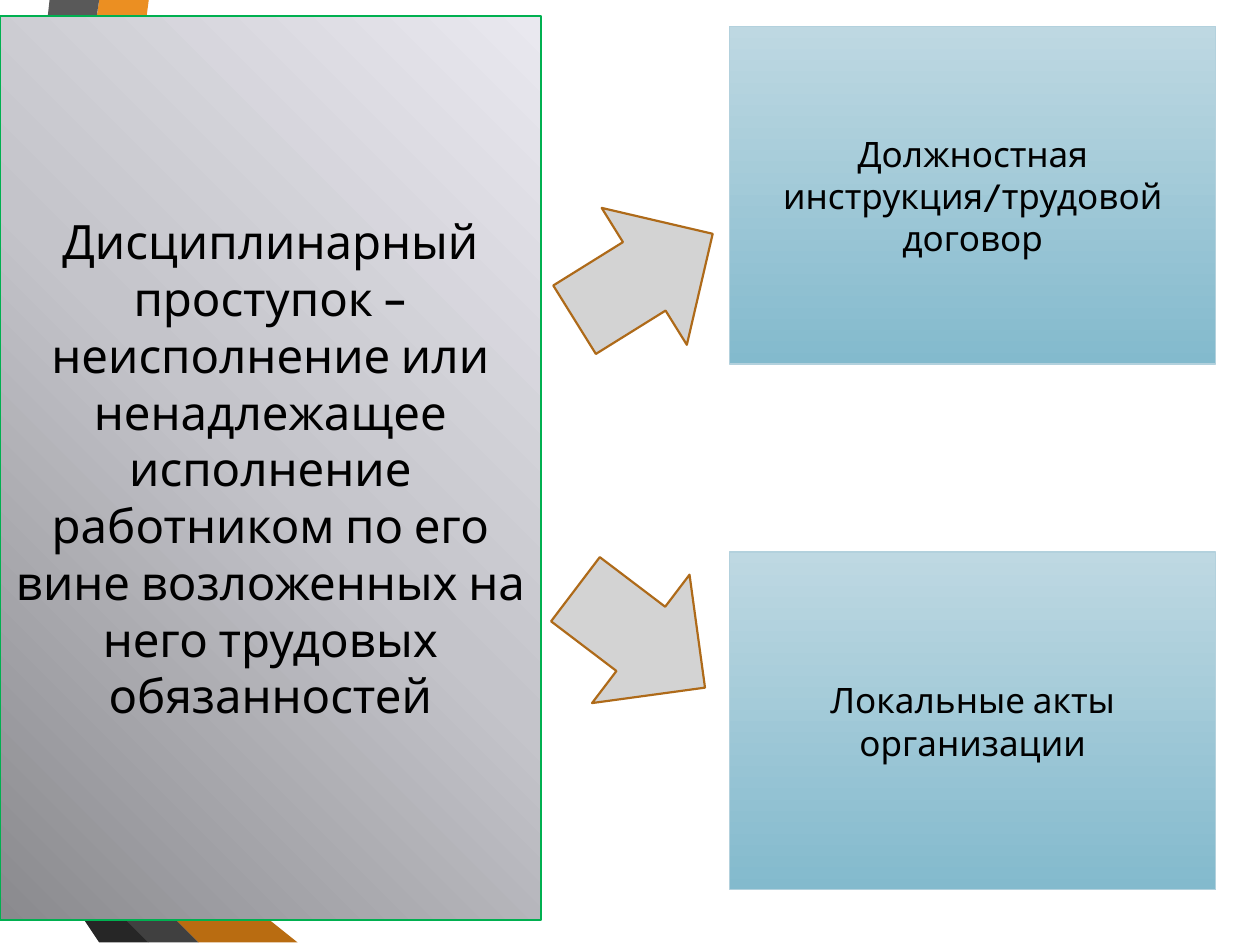
from copy import deepcopy

from pptx import Presentation
from pptx import util as u
from pptx.dml.color import RGBColor
from pptx.enum import shapes, text
from pptx.oxml.ns import qn

BLACK = RGBColor(0, 0, 0)
GREEN = RGBColor(0x00, 0xB0, 0x50)
PALE_BLUE = RGBColor(0xB3, 0xD1, 0xDD)
BLUES = [(0, RGBColor(0xBE, 0xD8, 0xE2)), (1, RGBColor(0x83, 0xBA, 0xCD))]
GREYS = [(0, RGBColor(0x8A, 0x8A, 0x8E)), (0.5, RGBColor(0xC4, 0xC4, 0xCA)),
         (1, RGBColor(0xE9, 0xE8, 0xEF))]
ARROW_FILL = RGBColor(0xD3, 0xD3, 0xD3)
ARROW_LINE = RGBColor(0xAE, 0x6A, 0x19)
FONT = "Cabin"

# Ribbons at the left edge: colour, corners in cm
RIBBONS = [
    (RGBColor(0xEB, 0x8F, 0x22),
     [(0, 13.82), (0, 14.6), (0.56, 14.7), (2.97, 0), (2.26, 0)]),
    (RGBColor(0x59, 0x59, 0x59), [(2.11, 0), (1.4, 0), (0, 8.53), (0, 12.85)]),
    (RGBColor(0x26, 0x26, 0x26),
     [(0, 15.72), (0, 15.77), (2.36, 19.05), (2.51, 19.05)]),
    (RGBColor(0x7B, 0x48, 0x0B),
     [(0, 14.7), (0, 14.73), (3.96, 19.05), (4.14, 19.05)]),
    (RGBColor(0xB9, 0x6C, 0x11),
     [(0, 14.7), (4.14, 19.05), (5.92, 19.05), (0.56, 14.7), (0, 14.6)]),
    (RGBColor(0x40, 0x40, 0x40),
     [(0, 15.72), (2.51, 19.05), (3.84, 19.05), (0, 14.88)]),
]

DEFINITION = ("Дисциплинарный проступок – неисполнение или ненадлежащее исполнение "
              "работником по его вине возложенных на него трудовых обязанностей")
# Source documents: text, top in cm
SOURCES = [("Должностная инструкция/трудовой договор", 0.53),
           ("Локальные акты организации", 11.13)]
# Arrows: left, top in cm, rotation
ARROWS = [(11.35, 3.94, 58.1), (11.28, 11.23, 127.2)]

prs = Presentation()
prs.slide_width, prs.slide_height = u.Cm(25.4), u.Cm(19.05)
s = prs.slides.add_slide(prs.slide_layouts[6])


def add_preset(kind, box, line, width):
    sp = s.shapes.add_shape(kind, *map(u.Cm, box))
    sp.shadow.inherit = False
    sp.line.color.rgb = line
    sp.line.width = u.Pt(width)
    return sp


def fill_gradient(sp, stops, angle):
    sp.fill.gradient()
    sp.fill.gradient_angle = angle
    gs_list = sp._element.spPr.find(qn("a:gradFill")).find(qn("a:gsLst"))
    for _ in stops[2:]:
        gs_list.append(deepcopy(gs_list[0]))
    for stop, (position, color) in zip(sp.fill.gradient_stops, stops):
        stop.position = position
        stop.color.rgb = color


def add_panel(words, box, size, stops, angle, line, width):
    sp = add_preset(shapes.MSO_SHAPE.RECTANGLE, box, line, width)
    fill_gradient(sp, stops, angle)
    tf = sp.text_frame
    tf.word_wrap = True
    tf.vertical_anchor = text.MSO_ANCHOR.MIDDLE
    p = tf.paragraphs[0]
    p.text = words
    p.alignment = text.PP_ALIGN.CENTER
    p.font.name, p.font.size, p.font.color.rgb = FONT, u.Pt(size), BLACK


# Ribbons
for color, corners in RIBBONS:
    builder = s.shapes.build_freeform(*corners[0], scale=u.Cm(1))
    builder.add_line_segments(corners[1:], close=True)
    sp = builder.convert_to_shape()
    sp.shadow.inherit = False
    sp.fill.solid()
    sp.fill.fore_color.rgb = color
    sp.line.fill.background()

# Panels
add_panel(DEFINITION, (0, 0.33, 10.9, 18.21), 27, GREYS, 45, GREEN, 1.25)
for words, top in SOURCES:
    add_panel(words, (14.71, top, 9.8, 6.81), 20, BLUES, 270, PALE_BLUE, 0.75)

# Arrows from the definition to the documents
for left, top, rotation in ARROWS:
    sp = add_preset(shapes.MSO_SHAPE.UP_ARROW, (left, top, 3.25, 3.28), ARROW_LINE, 1.25)
    sp.rotation = rotation
    sp.fill.solid()
    sp.fill.fore_color.rgb = ARROW_FILL

prs.save("out.pptx")
